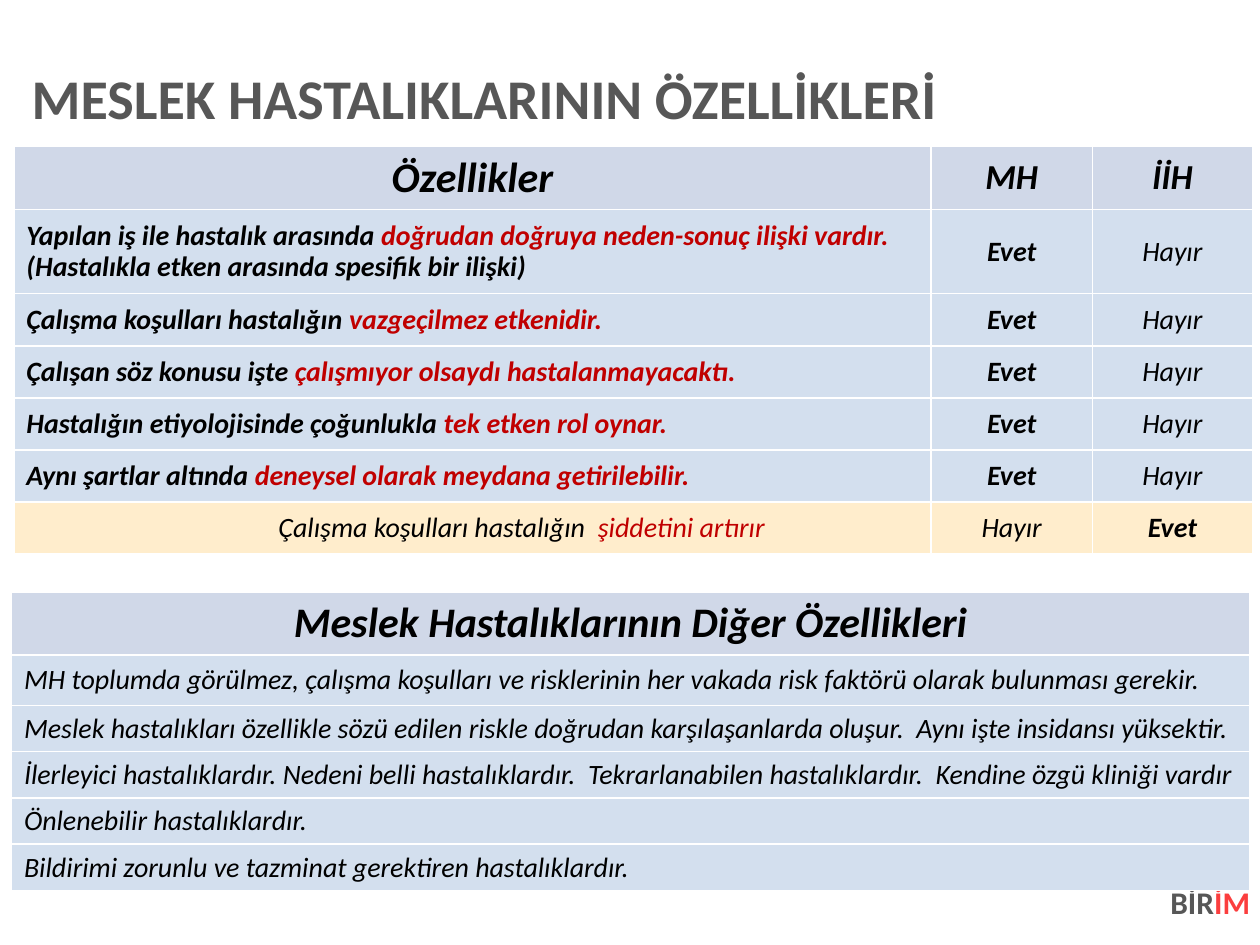
from lxml.etree import SubElement
from pptx import Presentation
from pptx.dml.color import RGBColor
from pptx.enum.text import MSO_ANCHOR, PP_ALIGN
from pptx.oxml.ns import qn
from pptx.util import Cm, Pt

FONT = "Calibri"
BLACK, WHITE, GREY = "000000", "FFFFFF", "575757"
DARK_RED, BRIGHT_RED = "C00000", "FB3E3E"
HEADER_FILL, BODY_FILL, CONTRAST_FILL = "D0D8E8", "D3DFEE", "FFEDCC"

# Opening words, highlighted words, remaining words
OCCUPATIONAL_TRAITS = [
    ("Yapılan iş ile hastalık arasında ", "doğrudan doğruya neden-sonuç ilişki vardır. ",
     "(Hastalıkla etken arasında spesifik bir ilişki)"),
    ("Çalışma koşulları hastalığın ", "vazgeçilmez etkenidir."),
    ("Çalışan söz konusu işte ", "çalışmıyor olsaydı hastalanmayacaktı."),
    ("Hastalığın etiyolojisinde çoğunlukla ", "tek etken rol oynar."),
    ("Aynı şartlar altında ", "deneysel olarak meydana getirilebilir."),
]
WORK_RELATED_TRAIT = ("Çalışma koşulları hastalığın  ", "şiddetini artırır")
OTHER_TRAITS = [
    "MH toplumda görülmez, çalışma koşulları ve risklerinin her vakada risk faktörü olarak "
    "bulunması gerekir.",
    "Meslek hastalıkları özellikle sözü edilen riskle doğrudan karşılaşanlarda oluşur.  "
    "Aynı işte insidansı yüksektir.",
    "İlerleyici hastalıklardır. Nedeni belli hastalıklardır.  "
    "Tekrarlanabilen hastalıklardır.  Kendine özgü kliniği vardır",
    "Önlenebilir hastalıklardır.",
    "Bildirimi zorunlu ve tazminat gerektiren hastalıklardır.",
]


def color(value):
    return RGBColor.from_string(value)


def write_runs(paragraph, texts, colors, size, bold=False, italic=False):
    for text, run_color in zip(texts, colors):
        run = paragraph.add_run()
        run.text = text
        font = run.font
        font.name, font.size, font.bold, font.italic = FONT, Pt(size), bold, italic
        font.color.rgb = color(run_color)


def add_text_box(slide, left, top, width, height, vertical_inset=0):
    """Add an empty box without side insets and return its text frame."""
    frame = slide.shapes.add_textbox(Cm(left), Cm(top), Cm(width), Cm(height)).text_frame
    frame.word_wrap = True
    frame.margin_left = frame.margin_right = 0
    frame.margin_top = frame.margin_bottom = Cm(vertical_inset)
    return frame


def add_table(slide, left, top, column_widths, row_heights):
    shape = slide.shapes.add_table(
        len(row_heights), len(column_widths), Cm(left), Cm(top),
        Cm(sum(column_widths)), Cm(sum(row_heights)))
    table = shape.table
    for column, width in zip(table.columns, column_widths):
        column.width = Cm(width)
    for row, height in zip(table.rows, row_heights):
        row.height = Cm(height)
    return table


def add_borders(cell):
    properties = cell._tc.get_or_add_tcPr()
    for side in ("lnL", "lnR", "lnT", "lnB"):
        line = SubElement(properties, qn(f"a:{side}"), w=str(Pt(1)))
        fill = SubElement(line, qn("a:solidFill"))
        SubElement(fill, qn("a:srgbClr"), val=WHITE)


def fill_cell(cell, texts, fill, size=16, bold=False, alignment=PP_ALIGN.LEFT):
    """Write italic text in a cell, with the second run highlighted."""
    add_borders(cell)
    cell.fill.solid()
    cell.fill.fore_color.rgb = color(fill)
    cell.vertical_anchor = MSO_ANCHOR.MIDDLE
    paragraph = cell.text_frame.paragraphs[0]
    paragraph.alignment = alignment
    write_runs(paragraph, texts, (BLACK, DARK_RED, BLACK), size, bold, italic=True)
    return paragraph


def add_title(slide):
    frame = add_text_box(slide, 0.64, 1.14, 24.49, 1.8, vertical_inset=0.13)
    frame.vertical_anchor = MSO_ANCHOR.MIDDLE
    paragraph = frame.paragraphs[0]
    paragraph.line_spacing = 0.9
    write_runs(paragraph, ["MESLEK HASTALIKLARININ ÖZELLİKLERİ"], [GREY], 32, bold=True)


def add_footer_word(slide):
    paragraph = add_text_box(slide, 23.52, 17.81, 1.68, 1.42).paragraphs[0]
    paragraph.alignment = PP_ALIGN.RIGHT
    write_runs(paragraph, ["BİR", "İM"], [GREY, BRIGHT_RED], 18, bold=True)


def add_comparison_table(slide):
    table = add_table(slide, 0.28, 2.95, [18.49, 3.25, 3.23], [1.25, 1.7] + [1.05] * 5)
    for column, (heading, size) in enumerate([("Özellikler", 24), ("MH", 20), ("İİH", 20)]):
        fill_cell(table.cell(0, column), [heading], HEADER_FILL, size, True, PP_ALIGN.CENTER)

    last_row = len(OCCUPATIONAL_TRAITS) + 1
    for row, trait in enumerate(OCCUPATIONAL_TRAITS + [WORK_RELATED_TRAIT], start=1):
        occupational = row < last_row
        fill = BODY_FILL if occupational else CONTRAST_FILL
        answers = ("Evet", "Hayır") if occupational else ("Hayır", "Evet")
        paragraph = fill_cell(table.cell(row, 0), trait, fill, bold=occupational)
        if row == 1:
            paragraph.line_spacing = 0.9
        if not occupational:
            paragraph.level = 4
            paragraph._p.get_or_add_pPr().set("marL", str(Cm(5.08)))
        for column, answer in enumerate(answers, start=1):
            fill_cell(table.cell(row, column), [answer], fill,
                      bold=answer == "Evet", alignment=PP_ALIGN.CENTER)


def add_other_traits_table(slide):
    table = add_table(slide, 0.23, 11.93, [24.97], [1.23, 1.02] + [0.93] * 4)
    fill_cell(table.cell(0, 0), ["Meslek Hastalıklarının Diğer Özellikleri"],
              HEADER_FILL, 24, True, PP_ALIGN.CENTER)
    for row, trait in enumerate(OTHER_TRAITS, start=1):
        paragraph = fill_cell(table.cell(row, 0), [trait], BODY_FILL)
        if row == 1:
            paragraph.line_spacing = 0.9


def main():
    presentation = Presentation()
    presentation.slide_width, presentation.slide_height = Cm(25.4), Cm(19.05)
    slide = presentation.slides.add_slide(presentation.slide_layouts[6])
    add_title(slide)
    add_footer_word(slide)
    add_comparison_table(slide)
    add_other_traits_table(slide)
    presentation.save("out.pptx")


if __name__ == "__main__":
    main()
